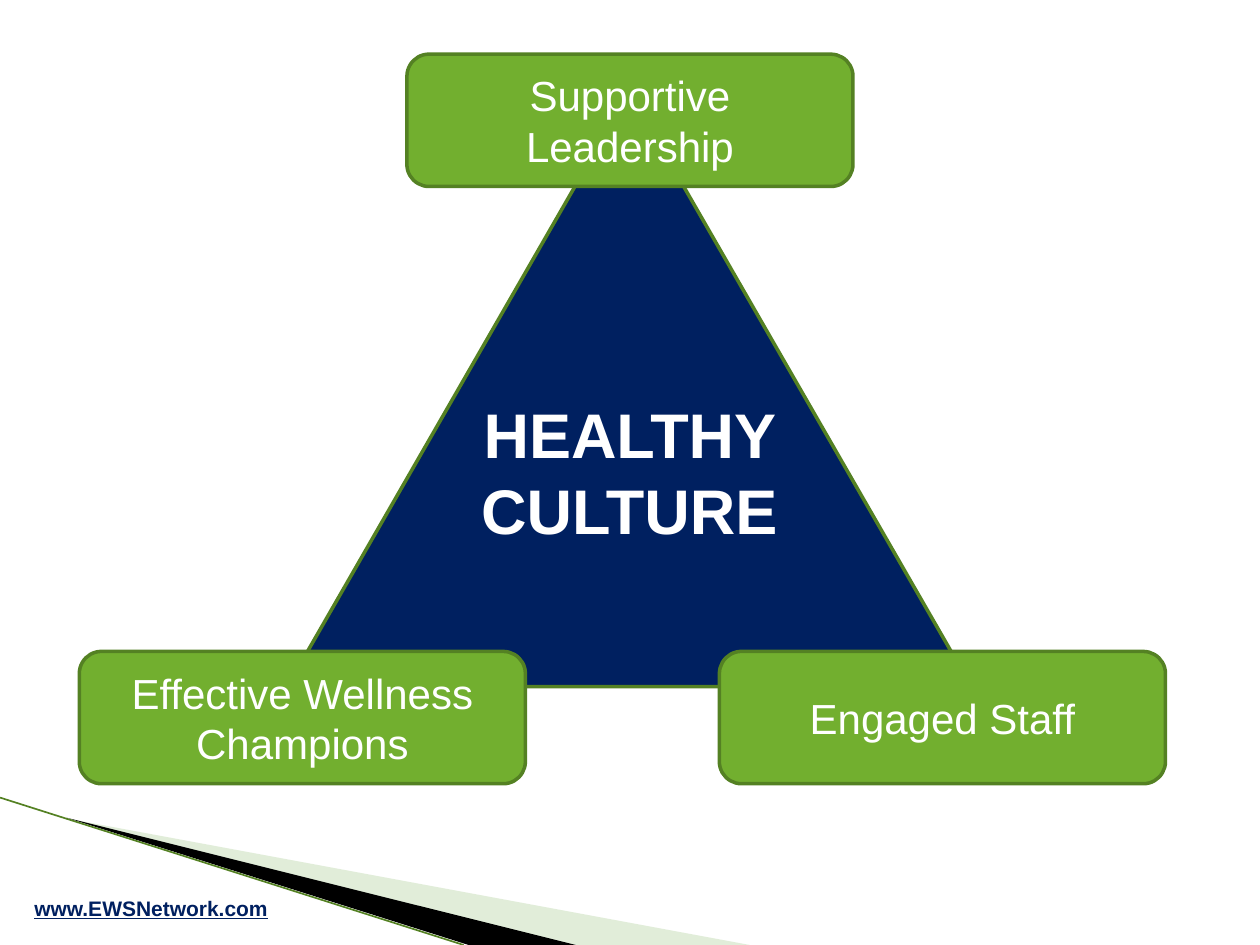
from dataclasses import dataclass

from lxml import etree
from pptx import Presentation
from pptx.dml.color import RGBColor
from pptx.enum.shapes import MSO_CONNECTOR, MSO_SHAPE
from pptx.enum.text import MSO_ANCHOR, PP_ALIGN
from pptx.oxml.ns import qn
from pptx.util import Inches, Pt

STRAIGHT = MSO_CONNECTOR.STRAIGHT
TRIANGLE = MSO_SHAPE.ISOSCELES_TRIANGLE
ROUNDED = MSO_SHAPE.ROUNDED_RECTANGLE
CENTER = PP_ALIGN.CENTER
TOP = MSO_ANCHOR.TOP
MIDDLE = MSO_ANCHOR.MIDDLE


@dataclass(frozen=True)
class Theme:
    font: str = "Arial"
    navy: str = "002060"
    green: str = "72AF2F"
    outline: str = "548123"
    pale: str = "B4D3A1"
    black: str = "000000"
    white: str = "FFFFFF"
    title_size: float = 36
    pillar_size: float = 24
    link_size: float = 12
    outline_width: float = 2
    edge_width: float = 0.95


@dataclass(frozen=True)
class Pillar:
    text: str
    left: float
    top: float


@dataclass(frozen=True)
class Wedge:
    points: tuple
    color: str
    opacity: int = 100


THEME = Theme()
PILLAR_WIDTH, PILLAR_HEIGHT = 3.54, 1.05
PILLARS = (
    Pillar("Effective Wellness Champions", 0.63, 5.17),
    Pillar("Engaged Staff", 5.71, 5.17),
    Pillar("Supportive Leadership", 3.23, 0.43),
)
WEDGES = (
    Wedge(((0.55, 6.5), (5.95, 7.5), (4.56, 7.5)), THEME.pale, 40),
    Wedge(((0.53, 6.49), (4.57, 7.5), (3.72, 7.5)), THEME.black),
)


def fill_solid(s, color: str) -> None:
    s.fill.solid()
    s.fill.fore_color.rgb = RGBColor.from_string(color)


def write_text(s, text: str, *, size: float, color: str = THEME.white,
               bold: bool = False, underline: bool = False, anchor=TOP) -> None:
    tf = s.text_frame
    tf.word_wrap = True
    tf.vertical_anchor = anchor
    p = tf.paragraphs[0]
    p.alignment = CENTER
    r = p.add_run()
    r.text = text
    r.font.name = THEME.font
    r.font.size = Pt(size)
    r.font.bold = bold
    r.font.underline = underline
    r.font.color.rgb = RGBColor.from_string(color)


def add_label(sp, text: str, left: float, top: float, width: float,
              height: float, **style) -> None:
    s = sp.add_textbox(Inches(left), Inches(top), Inches(width), Inches(height))
    write_text(s, text, bold=True, **style)


def add_outlined(sp, kind, left: float, top: float, width: float,
                 height: float, color: str):
    s = sp.add_shape(kind, Inches(left), Inches(top), Inches(width), Inches(height))
    s.shadow.inherit = False
    fill_solid(s, color)
    s.line.color.rgb = RGBColor.from_string(THEME.outline)
    s.line.width = Pt(THEME.outline_width)
    return s


def add_wedge(sp, wedge: Wedge) -> None:
    start, *rest = [(Inches(x), Inches(y)) for x, y in wedge.points]
    builder = sp.build_freeform(*start)
    builder.add_line_segments(rest, close=True)
    s = builder.convert_to_shape()
    s.shadow.inherit = False
    fill_solid(s, wedge.color)
    s.line.fill.background()
    if wedge.opacity < 100:
        color = s.fill._xPr.find(qn("a:solidFill"))[0]
        etree.SubElement(color, qn("a:alpha"), val=str(wedge.opacity * 1000))


def add_edge(sp) -> None:
    s = sp.add_connector(STRAIGHT, Inches(0), Inches(6.33), Inches(3.68), Inches(7.5))
    s.line.color.rgb = RGBColor.from_string(THEME.outline)
    s.line.width = Pt(THEME.edge_width)
    etree.SubElement(s._element.spPr, qn("a:effectLst"))


def main() -> None:
    prs = Presentation()
    prs.slide_width, prs.slide_height = Inches(10), Inches(7.5)
    sp = prs.slides.add_slide(prs.slide_layouts[6]).shapes

    for wedge in WEDGES:
        add_wedge(sp, wedge)
    add_edge(sp)
    add_label(sp, "www.EWSNetwork.com", 0, 7.06, 2.4, 0.3,
              size=THEME.link_size, color=THEME.navy, underline=True)

    add_outlined(sp, TRIANGLE, 2.28, 0.73, 5.43, 4.72, THEME.navy)
    for pillar in PILLARS:
        s = add_outlined(sp, ROUNDED, pillar.left, pillar.top,
                         PILLAR_WIDTH, PILLAR_HEIGHT, THEME.green)
        write_text(s, pillar.text, size=THEME.pillar_size, anchor=MIDDLE)
    add_label(sp, "HEALTHY CULTURE", 3.52, 3.09, 2.95, 1.31, size=THEME.title_size)

    prs.save("out.pptx")


if __name__ == "__main__":
    main()
